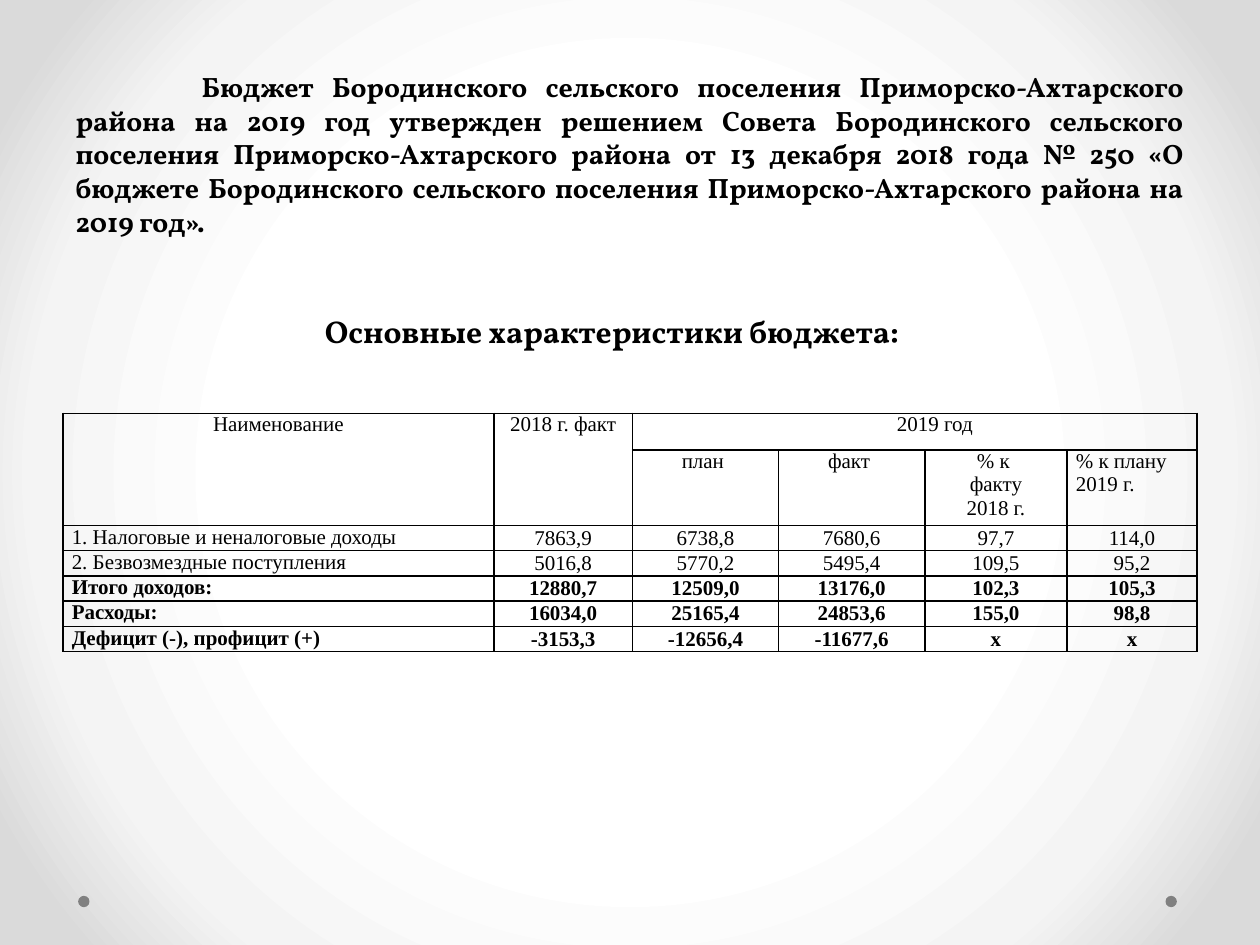
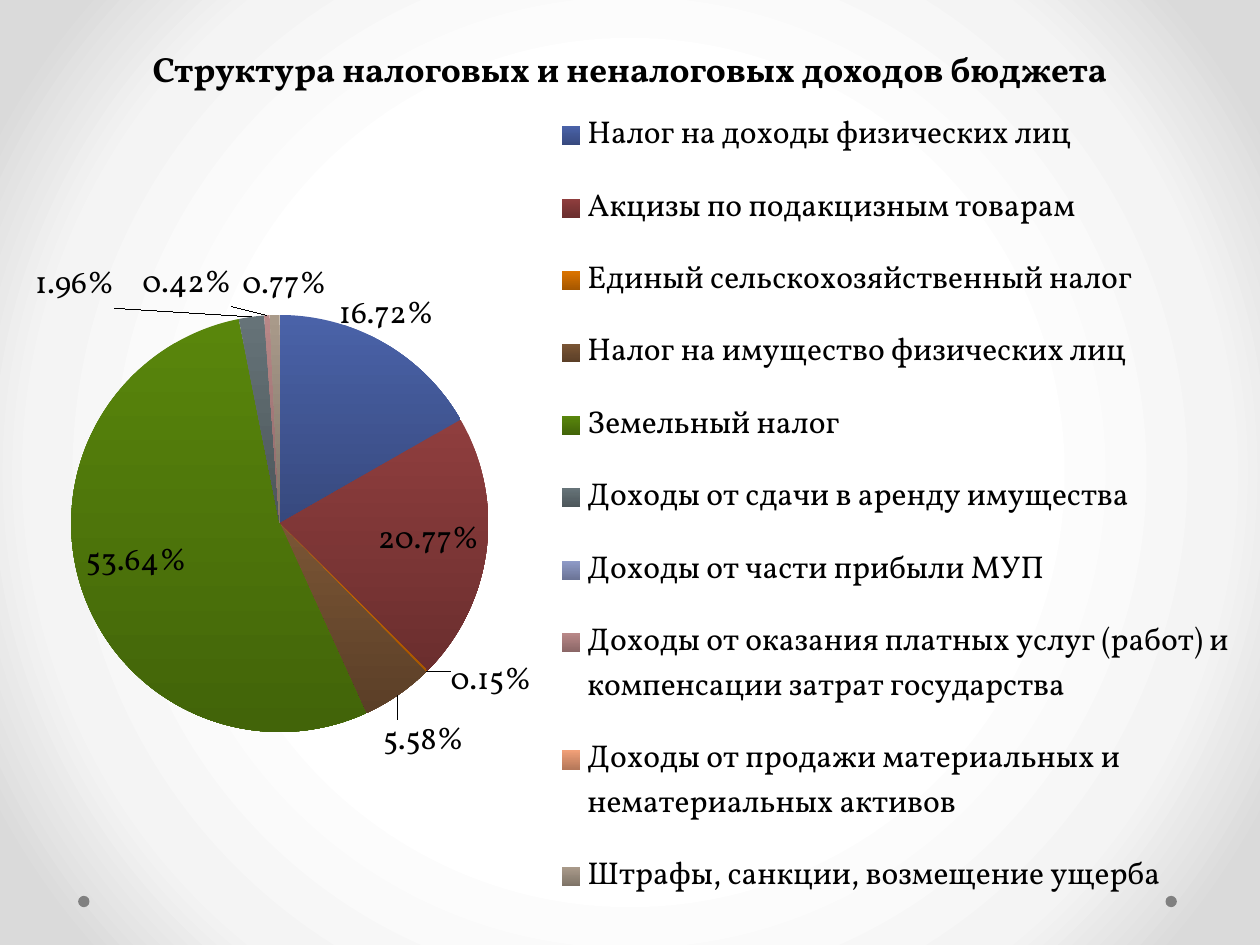
"""Build two slides on a village budget: key figures and income structure."""
from lxml import etree
from pptx import Presentation
from pptx.chart.data import CategoryChartData
from pptx.dml.color import RGBColor
from pptx.enum import chart as ch, shapes, text
from pptx.oxml import parse_xml
from pptx.oxml.ns import nsdecls, qn
from pptx.util import Inches, Pt

BLACK = RGBColor(0, 0, 0)
GREY = RGBColor(0x80, 0x80, 0x80)
GLOW = [(50, "FFFFFF"), (76, "F4F4F4"), (92, "DADADA")]
SERIF, ROMAN = "Vollkorn", "Times New Roman"
LEFT, MID, JUST = text.PP_ALIGN.LEFT, text.PP_ALIGN.CENTER, text.PP_ALIGN.JUSTIFY

INTRO = ("Бюджет Бородинского сельского поселения Приморско-Ахтарского района "
         "на 2019 год утвержден решением Совета Бородинского сельского поселения "
         "Приморско-Ахтарского района от 13 декабря 2018 года № 250 «О бюджете "
         "Бородинского сельского поселения Приморско-Ахтарского района на 2019 год».")
COLS = [3.42, 1.1, 1.16, 1.16, 1.13, 1.03]
ROWS = [0.29, 0.6] + [0.2] * 5
HEADS = [
    (0, 0, "Наименование"), (0, 1, "2018 г. факт"), (0, 2, "2019 год"),
    (1, 2, "план "), (1, 3, "факт "), (1, 4, "% к \nфакту\n2018 г."),
    (1, 5, "% к плану\n2019 г."),
]
MERGES = [(0, 0, 1, 0), (0, 1, 1, 1), (0, 2, 0, 5)]
FIGURES = [
    ("1. Налоговые и неналоговые доходы", "7863,9", "6738,8", "7680,6", "97,7", "114,0"),
    ("2. Безвозмездные поступления", "5016,8", "5770,2", "5495,4", "109,5", "95,2"),
    ("Итого доходов:", "12880,7", "12509,0", "13176,0", "102,3", "105,3"),
    ("Расходы:", "16034,0", "25165,4", "24853,6", "155,0", "98,8"),
    ("Дефицит (-), профицит (+)", "-3153,3", "-12656,4", "-11677,6", "х", "х"),
]
WIDE, HIGH = 9.88, 6.77
PERCENT = r"0.00\%"
INCOME = [
    ("Налог на доходы физических лиц", 16.72, "4A62A8"),
    ("Акцизы по подакцизным товарам", 20.77, "8F3E3E"),
    ("Единый сельскохозяйственный налог", 0.15, "DC7400"),
    ("Налог на имущество физических лиц", 5.58, "7A5535"),
    ("Земельный налог", 53.64, "59860C"),
    ("Доходы от сдачи в аренду имущества", 1.96, "667378"),
    ("Доходы от части прибыли МУП", 0, "8F9BC8"),
    ("Доходы от оказания платных услуг (работ) и компенсации затрат государства",
     0.42, "B98888"),
    ("Доходы от продажи материальных и нематериальных активов", 0, "F2A078"),
    ("Штрафы, санкции, возмещение ущерба", 0.77, "A99A8A"),
]
SHIFTS = {0: (-0.39, 0.01), 2: (0.15, -0.14), 3: (-0.15, 0.14),
          5: (-1.08, -0.01), 7: (-0.63, -0.01), 9: (0.08, 0)}


def write(frame, words, size=12, font=ROMAN, bold=False, align=LEFT,
          anchor=None, space=None, first=0, left=0):
    """Fill a text frame, one paragraph for each line of the words."""
    frame.text = words
    if anchor is not None:
        frame.vertical_anchor = anchor
    for para in frame.paragraphs:
        para.alignment = align
        if space:
            para.line_spacing = Pt(space)
        if first or left:
            props = para._p.get_or_add_pPr()
            props.set("marL", str(Inches(left)))
            props.set("indent", str(Inches(first)))
        for run in para.runs:
            run.font.size, run.font.name, run.font.bold = Pt(size), font, bold
            run.font.color.rgb = BLACK


def glow(master):
    """Give the master a round grey gradient as its background."""
    master.background.fill.solid()
    props = master.element.find(".//" + qn("p:bgPr"))
    stops = "".join(f'<a:gs pos="{pos * 1000}"><a:srgbClr val="{tone}"/></a:gs>'
                    for pos, tone in GLOW)
    grad = parse_xml(
        f'<a:gradFill {nsdecls("a")} rotWithShape="1"><a:gsLst>{stops}</a:gsLst>'
        '<a:path path="circle"><a:fillToRect l="50000" t="50000" r="50000" b="50000"/>'
        '</a:path></a:gradFill>')
    props.replace(props.find(qn("a:solidFill")), grad)


def dot(slide, left):
    """Draw one of the small dots at the foot."""
    shape = slide.shapes.add_shape(shapes.MSO_SHAPE.OVAL, Inches(left), Inches(7.11),
                                   Inches(0.09), Inches(0.09))
    shape.shadow.inherit = False
    shape.fill.solid()
    shape.fill.fore_color.rgb = GREY
    shape.line.fill.background()


def page(deck, title, high, **form):
    """Add a slide with dots and a title of the given height."""
    slide = deck.slides.add_slide(deck.slide_layouts[5])
    for left in (9.25, 0.62):
        dot(slide, left)
    head = slide.shapes.title
    head.left, head.top = Inches(0.5), Inches(0)
    head.width, head.height = Inches(9), Inches(high)
    head.text_frame.auto_size = text.MSO_AUTO_SIZE.NONE
    write(head.text_frame, title, font=SERIF, bold=True,
          anchor=text.MSO_ANCHOR.BOTTOM, **form)
    return slide


def label(slide, words, left, top, wide, high, **form):
    """Add a text box."""
    box = slide.shapes.add_textbox(Inches(left), Inches(top), Inches(wide), Inches(high))
    box.text_frame.word_wrap = True
    write(box.text_frame, words, **form)


def frame(cell):
    """Clear a cell's fill, set its margins and draw its borders."""
    cell.fill.background()
    cell.margin_left = cell.margin_right = Inches(0.07)
    cell.margin_top = cell.margin_bottom = 0
    props = cell._tc.get_or_add_tcPr()
    for spot, side in enumerate("LRTB"):
        props.insert(spot, parse_xml(
            f'<a:ln{side} {nsdecls("a")} w="{Pt(1)}"><a:solidFill>'
            f'<a:srgbClr val="{BLACK}"/></a:solidFill></a:ln{side}>'))


def budget(slide):
    """Add the table of the budget's key figures."""
    grid = slide.shapes.add_table(len(ROWS), len(COLS), Inches(0.5), Inches(3.28),
                                  Inches(sum(COLS)), Inches(sum(ROWS))).table
    grid.first_row = grid.horz_banding = False
    for col, wide in zip(grid.columns, COLS):
        col.width = Inches(wide)
    for row, high in zip(grid.rows, ROWS):
        row.height = Inches(high)
    for cell in grid.iter_cells():
        frame(cell)
    for top, left, low, right in MERGES:
        grid.cell(top, left).merge(grid.cell(low, right))
    for row, col, words in HEADS:
        write(grid.cell(row, col).text_frame, words,
              align=LEFT if (row, col) == (1, 5) else MID,
              left=0.32 if (row, col) == (0, 2) else 0)
    for row, items in enumerate(FIGURES, 2):
        for col, words in enumerate(items):
            cell = grid.cell(row, col)
            write(cell.text_frame, words, bold=row > 3, align=MID if col else LEFT)
            if col:
                cell.vertical_anchor = text.MSO_ANCHOR.MIDDLE


def layout(x, y, wide=None, high=None, inner=False):
    """Return a chart layout from inches, or an offset when it has no size."""
    items = [("layoutTarget", "inner")] if inner else []
    if wide:
        items += [("xMode", "edge"), ("yMode", "edge")]
    items += [("x", x / WIDE), ("y", y / HIGH)]
    if wide:
        items += [("w", wide / WIDE), ("h", high / HIGH)]
    body = "".join(f'<c:{name} val="{val}"/>' for name, val in items)
    return parse_xml(f'<c:layout {nsdecls("c")}><c:manualLayout>{body}'
                     '</c:manualLayout></c:layout>')


def tag(spot):
    """Return the label of one slice: moved, or deleted for a zero."""
    node = parse_xml(f'<c:dLbl {nsdecls("c")}><c:idx val="{spot}"/></c:dLbl>')
    if spot not in SHIFTS:
        etree.SubElement(node, qn("c:delete")).set("val", "1")
        return node
    node.append(layout(*SHIFTS[spot]))
    form = etree.SubElement(node, qn("c:numFmt"))
    form.set("formatCode", PERCENT)
    form.set("sourceLinked", "0")
    for name, val in [("dLblPos", "outEnd"), ("showLegendKey", "0"), ("showVal", "1"),
                      ("showCatName", "0"), ("showSerName", "0"),
                      ("showPercent", "0"), ("showBubbleSize", "0")]:
        etree.SubElement(node, qn("c:" + name)).set("val", val)
    return node


def shade(fill, tone):
    """Fill a slice with a tone that darkens downwards."""
    fill.gradient()
    fill.gradient_angle = 270
    top = RGBColor.from_string(tone)
    low = RGBColor(*(int(part * 0.75) for part in top))
    for stop, color, pos in zip(fill.gradient_stops, (top, low), (0, 1)):
        stop.color.rgb = color
        stop.position = pos


def place(parent, spot, node):
    """Put a layout into a chart part in place of any earlier one."""
    for old in parent.findall(qn("c:layout")):
        parent.remove(old)
    parent.insert(spot, node)


def pie(slide):
    """Add the pie of tax and other income."""
    data = CategoryChartData(number_format="0.00")
    data.categories = [name for name, _, _ in INCOME]
    data.add_series("Series 1", [val for _, val, _ in INCOME])
    chart = slide.shapes.add_chart(ch.XL_CHART_TYPE.PIE, Inches(0), Inches(0.6),
                                   Inches(WIDE), Inches(HIGH), data).chart
    chart.has_title = False
    chart.font.size, chart.font.name = Pt(18), SERIF
    chart.font.color.rgb = BLACK
    chart.has_legend = True
    chart.legend.position = ch.XL_LEGEND_POSITION.RIGHT
    chart.legend.include_in_layout = False
    root = chart.element
    place(root.find(".//" + qn("c:legend")), 1, layout(4.34, 0.08, 5.53, 6.68))
    place(root.find(".//" + qn("c:plotArea")), 0, layout(0.03, 1.9, 4.38, 3.31, True))
    chart.plots[0].vary_by_categories = True
    series = chart.plots[0].series[0]
    for spot, (_, _, tone) in enumerate(INCOME):
        shade(series.points[spot].format.fill, tone)
    tags = series.data_labels
    tags.show_percentage, tags.show_value = False, True
    tags.number_format, tags.number_format_is_linked = PERCENT, False
    tags.position = ch.XL_LABEL_POSITION.BEST_FIT
    moved = [spot for spot, item in enumerate(INCOME) if spot in SHIFTS or not item[1]]
    for order, spot in enumerate(moved):
        root.find(".//" + qn("c:ser") + "/" + qn("c:dLbls")).insert(order, tag(spot))


def main():
    """Build and save the deck."""
    deck = Presentation()
    deck.slide_width, deck.slide_height = Inches(10), Inches(7.5)
    glow(deck.slide_master)
    slide = page(deck, INTRO, 1.94, size=16, align=JUST, space=19.3, first=1)
    label(slide, "Основные характеристики бюджета:", 2.48, 2.43, 4.89, 0.4,
          size=18, font=SERIF, bold=True)
    budget(slide)
    slide = page(deck, "Структура налоговых и неналоговых доходов бюджета", 0.76,
                 size=20, align=MID, space=58)
    pie(slide)
    deck.save("out.pptx")


if __name__ == "__main__":
    main()
